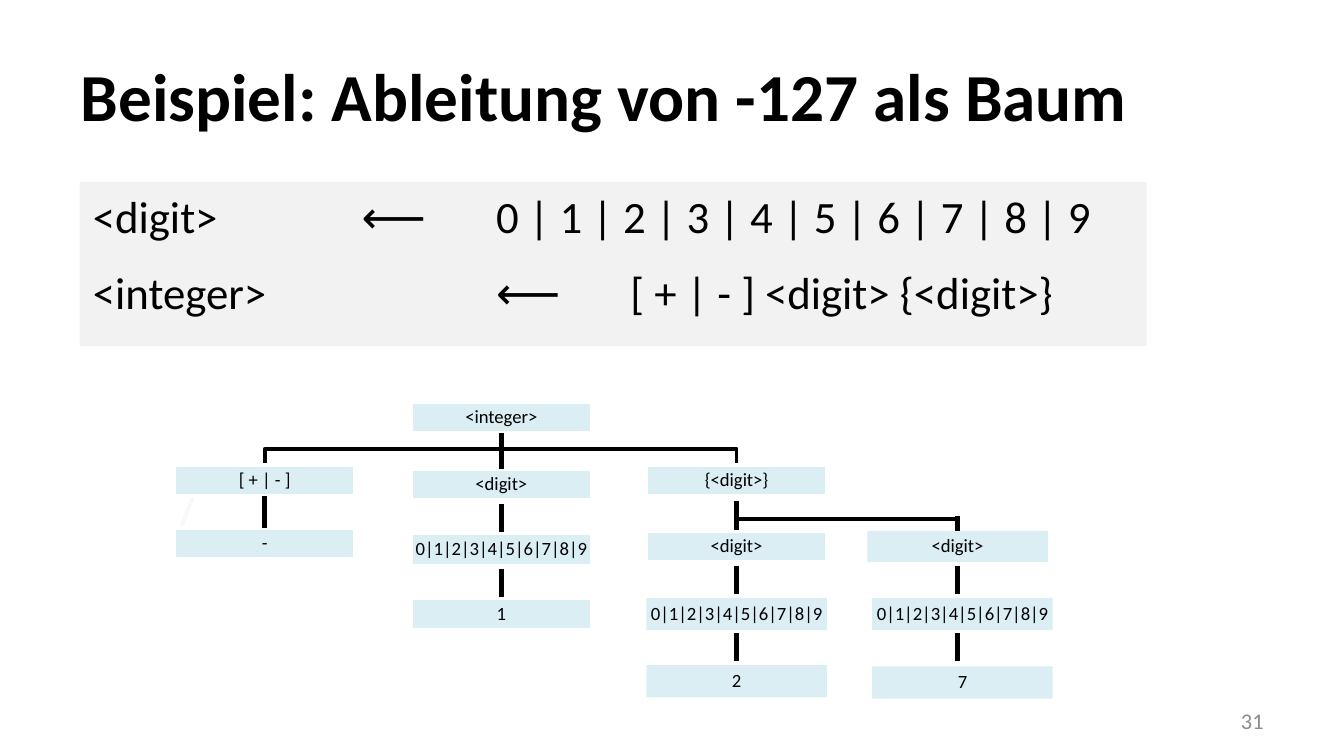
from lxml import etree
from pptx import Presentation
from pptx.dml.color import RGBColor
from pptx.enum import shapes as es, text as et
from pptx.oxml import ns
from pptx.util import Pt

FONT = "Calibri"
BLACK, WHITE, GREY, BLUE = "000000", "FFFFFF", "F2F2F2", "DBEEF4"
DIGITS = "0|1|2|3|4|5|6|7|8|9"
COLS = (141.8, 268.6, 394.6, 513)
SHIFT = 515.6  # centre of the lower boxes in the last column
WIDE = 96.7

# key: (text, centre x, top, height, has white rim)
NODES = {
    "root": ("<integer>", COLS[1], 215.3, 16.6, True),
    "sign": ("[ + | - ]", COLS[0], 249.1, 16.6, True),
    "minus": ("-", COLS[0], 283, 16.6, True),
    "first": ("<digit>", COLS[1], 251.3, 16.6, True),
    "first set": (DIGITS, COLS[1], 285.8, 17.3, True),
    "one": ("1", COLS[1], 320.4, 17.3, True),
    "rest": ("{<digit>}", COLS[2], 249.1, 16.6, True),
    "second": ("<digit>", COLS[2], 284.4, 16.6, True),
    "second set": (DIGITS, COLS[2], 320.4, 17.3, False),
    "two": ("2", COLS[2], 356.4, 17.3, False),
    "third": ("<digit>", COLS[3], 284.4, 16.6, False),
    "third set": (DIGITS, SHIFT, 320.4, 17.3, False),
    "seven": ("7", SHIFT, 357, 17.3, False),
}
# column, top, bottom
STEMS = (
    (1, 270, 285.1), (1, 304.6, 319.7),
    (2, 268.6, 283.7), (2, 303.1, 318.2), (2, 339.1, 354.2),
    (3, 303.1, 318.2), (3, 339.1, 354.2),
)


def tint(code):
    return RGBColor.from_string(code)


def style(para, size, color=BLACK, bold=False):
    font = para.font
    font.name, font.size, font.bold = FONT, Pt(size), bold
    font.color.rgb = tint(color)


def add_box(slide, x, y, w, h, fill):
    box = slide.shapes.add_shape(
        es.MSO_SHAPE.RECTANGLE, Pt(x), Pt(y), Pt(w), Pt(h))
    box.shadow.inherit = False
    box.fill.solid()
    box.fill.fore_color.rgb = tint(fill)
    box.line.fill.background()
    return box


def add_node(slide, label, mid, top, high, rim):
    box = add_box(slide, mid - WIDE / 2, top, WIDE, high, BLUE)
    if rim:
        box.line.color.rgb = tint(WHITE)
        box.line.width = Pt(2)
    frame = box.text_frame
    frame.word_wrap = False
    frame.vertical_anchor = et.MSO_ANCHOR.MIDDLE
    frame.margin_left = frame.margin_right = Pt(0.7)
    frame.margin_top = frame.margin_bottom = Pt(0.7)
    para = frame.paragraphs[0]
    para.text = label
    para.alignment = et.PP_ALIGN.CENTER
    para.line_spacing = 0.9
    style(para, 10)
    return box


def add_path(slide, points, color):
    """Draw an open, unfilled outline through the points."""
    spots = [(Pt(x), Pt(y)) for x, y in points]
    pen = slide.shapes.build_freeform(*spots[0])
    pen.add_line_segments(spots[1:], close=False)
    path = pen.convert_to_shape()
    path.shadow.inherit = False
    path.fill.background()
    path.line.color.rgb = tint(color)
    path.line.width = Pt(2)


def add_line(slide, x1, y1, x2, y2, width=2.6):
    line = slide.shapes.add_connector(
        es.MSO_CONNECTOR.STRAIGHT, Pt(x1), Pt(y1), Pt(x2), Pt(y2))
    line.line.color.rgb = tint(BLACK)
    line.line.width = Pt(width)
    etree.SubElement(line._element.spPr, ns.qn("a:effectLst"))
    return line


def set_tabs(para, stops):
    tabs = etree.SubElement(para._p.get_or_add_pPr(), ns.qn("a:tabLst"))
    for stop in stops:
        etree.SubElement(tabs, ns.qn("a:tab"), pos=str(Pt(stop)), algn="l")


def add_title(slide, label):
    title = slide.shapes.title
    title.left, title.top = Pt(36), Pt(16.6)
    title.width, title.height = Pt(648), Pt(67.7)
    frame = title.text_frame
    frame.vertical_anchor = et.MSO_ANCHOR.MIDDLE
    para = frame.paragraphs[0]
    para.text = label
    para.alignment = et.PP_ALIGN.LEFT
    style(para, 36, bold=True)


def add_rules(slide, rules):
    box = add_box(slide, 42.7, 97.5, 571.7, 87.8, GREY)
    frame = box.text_frame
    frame.word_wrap = True
    frame.vertical_anchor = et.MSO_ANCHOR.TOP
    for i, rule in enumerate(rules):
        para = frame.add_paragraph() if i else frame.paragraphs[0]
        para.text = rule
        para.alignment = et.PP_ALIGN.LEFT
        para.space_before = para.space_after = Pt(6)
        set_tabs(para, (72, 144, 216, 288))
        style(para, 24)


def add_number(slide, label):
    box = slide.shapes.add_textbox(Pt(516), Pt(375.4), Pt(168), Pt(21.6))
    frame = box.text_frame
    frame.word_wrap = True
    frame.vertical_anchor = et.MSO_ANCHOR.MIDDLE
    para = frame.paragraphs[0]
    para.text = label
    para.alignment = et.PP_ALIGN.RIGHT
    style(para, 12, "8C8C8C")


def add_tree(slide):
    for end in (COLS[2], COLS[0]):
        add_path(slide, [(COLS[1], 232), (COLS[1], 240.5),
                         (end, 240.5), (end, 249)], BLACK)
    add_path(slide, [(103.7, 265.7), (93.6, 290.9)], "F8F8F8")

    nodes = {key: add_node(slide, *node) for key, node in NODES.items()}

    for upper, lower in (("root", "first"), ("sign", "minus")):
        line = add_line(slide, 0, 0, 0, 0)
        line.begin_connect(nodes[upper], 2)
        line.end_connect(nodes[lower], 0)
    for col, top, foot in STEMS:
        add_line(slide, COLS[col], top, COLS[col], foot)
    add_line(slide, COLS[2], 278, COLS[3], 278, 2.25)
    drop = add_line(slide, COLS[3], 276.5, COLS[3], 284.4)
    drop.end_connect(nodes["third"], 0)


def main():
    deck = Presentation()
    deck.slide_width, deck.slide_height = Pt(720), Pt(405)
    slide = deck.slides.add_slide(deck.slide_layouts[5])
    add_title(slide, "Beispiel: Ableitung von -127 als Baum")
    add_number(slide, "31")
    add_rules(slide, (
        "<digit>\t\t⟵\t0 | 1 | 2 | 3 | 4 | 5 | 6 | 7 | 8 | 9",
        "<integer>\t\t⟵\t[ + | - ] <digit> {<digit>}",
    ))
    add_tree(slide)
    deck.save("out.pptx")


if __name__ == "__main__":
    main()
